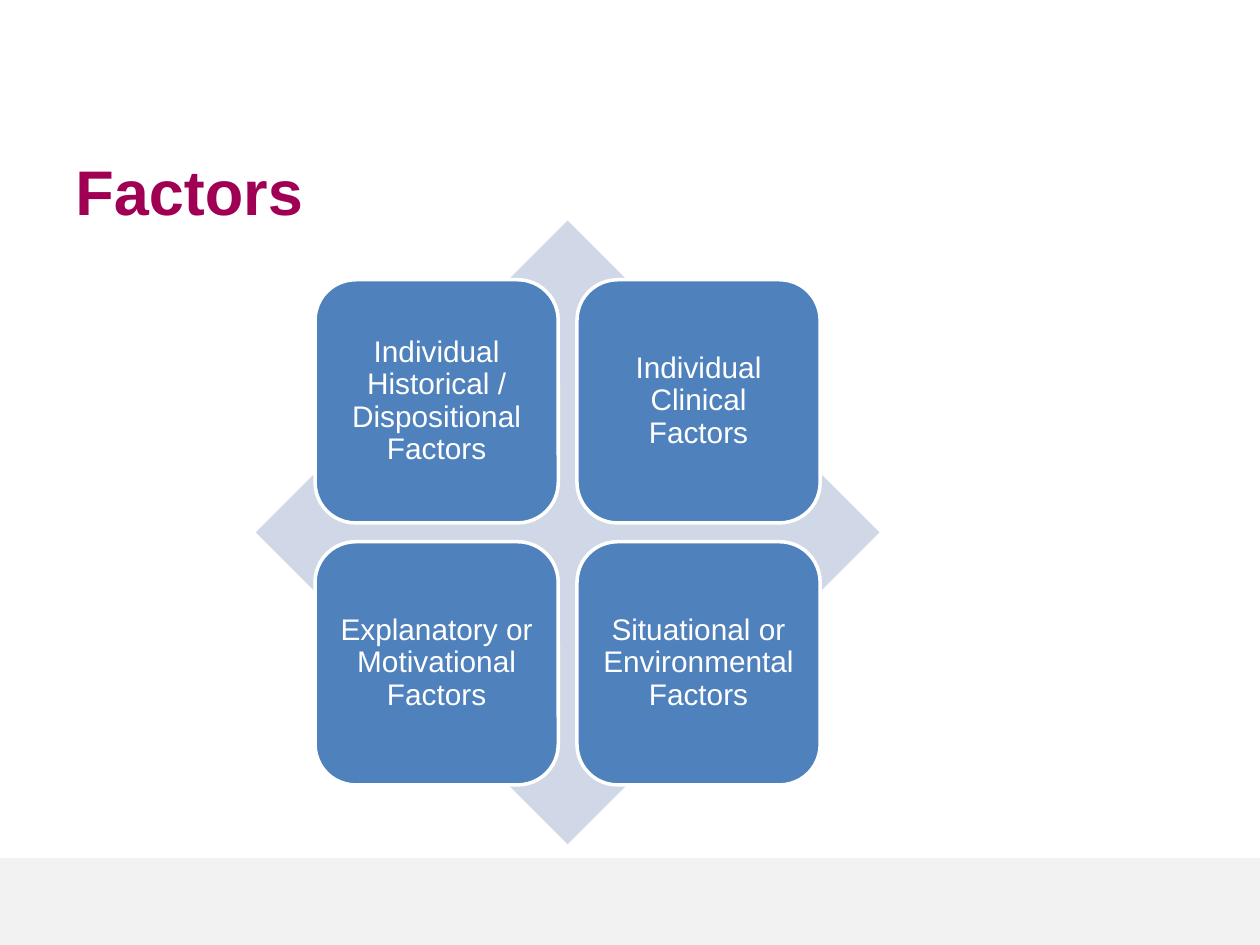
import pptx
import pptx.util
from pptx.dml.color import RGBColor
from pptx.enum.shapes import MSO_SHAPE
from pptx.enum.text import MSO_ANCHOR, PP_ALIGN

Inches = pptx.util.Inches
Pt = pptx.util.Pt

PLUM = RGBColor(0xA0, 0x00, 0x54)
BLUE = RGBColor(0x4F, 0x81, 0xBD)
PALE_BLUE = RGBColor(0xD0, 0xD8, 0xE8)
PALE_GREY = RGBColor(0xF2, 0xF2, 0xF2)
WHITE = RGBColor(0xFF, 0xFF, 0xFF)

FONT = "Arial"
WIDTH, HEIGHT = 10, 7.5
FOOTER_HEIGHT = 0.69
DIAMOND_LEFT, DIAMOND_TOP, DIAMOND_SIZE = 2.03, 1.75, 4.95
TILE_SIZE = 0.39 * DIAMOND_SIZE
TILE_PITCH = 0.42 * DIAMOND_SIZE
TILE_MARGIN = (DIAMOND_SIZE - TILE_SIZE - TILE_PITCH) / 2

FACTORS = [
    ["Individual Historical / Dispositional Factors", "Individual Clinical Factors"],
    ["Explanatory or Motivational Factors", "Situational or Environmental Factors"],
]


def add_filled_shape(page, kind, left, top, width, height, color):
    shape = page.shapes.add_shape(
        kind, Inches(left), Inches(top), Inches(width), Inches(height))
    shape.shadow.inherit = False
    shape.fill.solid()
    shape.fill.fore_color.rgb = color
    shape.line.fill.background()
    return shape


def write_text(box, text, size, color, anchor, align, bold=False):
    frame = box.text_frame
    frame.word_wrap = True
    frame.vertical_anchor = anchor
    frame.text = text
    para = frame.paragraphs[0]
    para.alignment = align
    font = para.runs[0].font
    font.name, font.size, font.bold = FONT, Pt(size), bold
    font.color.rgb = color


def add_title(page, text):
    box = page.shapes.add_textbox(
        Inches(0.5), Inches(1.12), Inches(8.5), Inches(0.74))
    write_text(box, text, 36, PLUM, MSO_ANCHOR.BOTTOM, PP_ALIGN.LEFT, bold=True)


def add_tile(page, row, column, text):
    left = DIAMOND_LEFT + TILE_MARGIN + column * TILE_PITCH
    top = DIAMOND_TOP + TILE_MARGIN + row * TILE_PITCH
    tile = add_filled_shape(page, MSO_SHAPE.ROUNDED_RECTANGLE,
                            left, top, TILE_SIZE, TILE_SIZE, BLUE)
    tile.line.color.rgb = WHITE
    tile.line.width = Pt(2)
    write_text(tile, text, 17, WHITE, MSO_ANCHOR.MIDDLE, PP_ALIGN.CENTER)
    frame = tile.text_frame
    frame.margin_left = frame.margin_right = Inches(0.07)
    frame.margin_top = frame.margin_bottom = Inches(0.07)
    frame.paragraphs[0].line_spacing = 0.9


def main():
    deck = pptx.Presentation()
    deck.slide_width, deck.slide_height = Inches(WIDTH), Inches(HEIGHT)
    page = deck.slides.add_slide(deck.slide_layouts[6])
    add_filled_shape(page, MSO_SHAPE.RECTANGLE, 0, HEIGHT - FOOTER_HEIGHT,
                     WIDTH, FOOTER_HEIGHT, PALE_GREY)
    add_title(page, "Factors")
    add_filled_shape(page, MSO_SHAPE.DIAMOND, DIAMOND_LEFT, DIAMOND_TOP,
                     DIAMOND_SIZE, DIAMOND_SIZE, PALE_BLUE)
    for row, texts in enumerate(FACTORS):
        for column, text in enumerate(texts):
            add_tile(page, row, column, text)
    deck.save("out.pptx")


if __name__ == "__main__":
    main()
